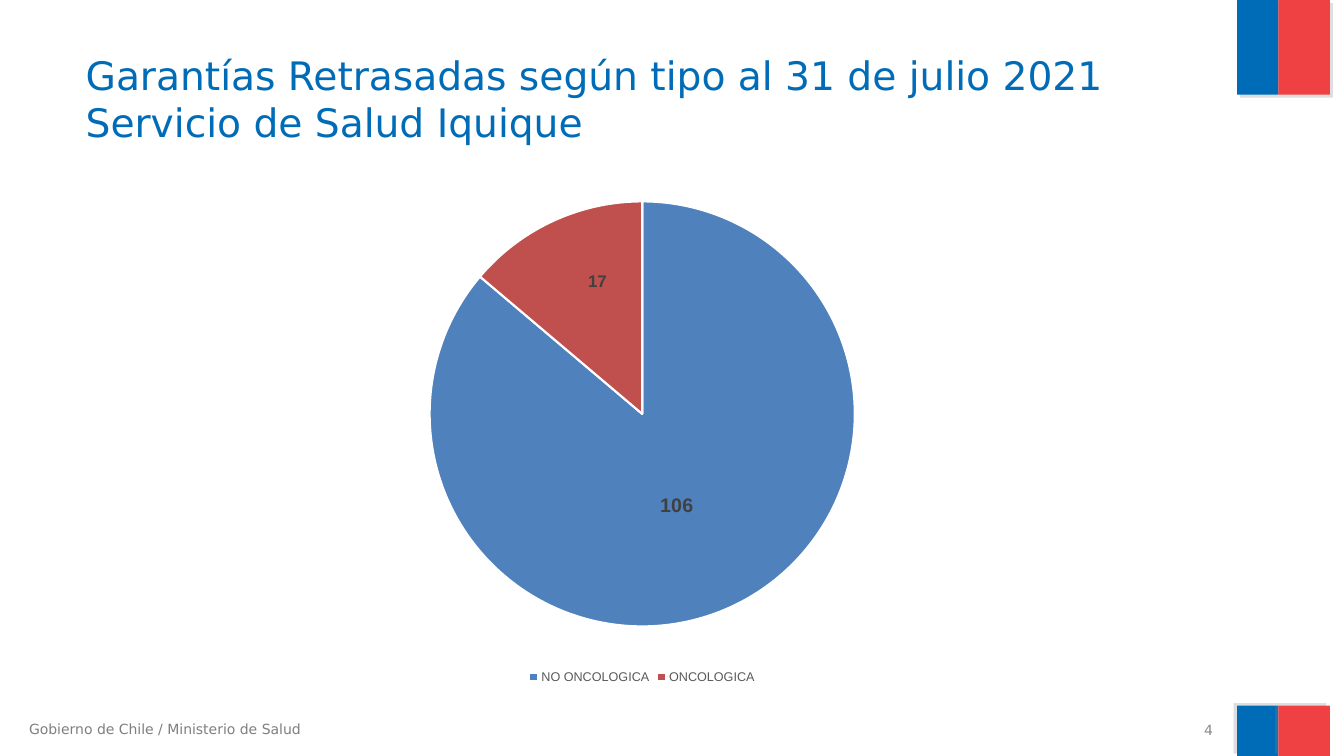
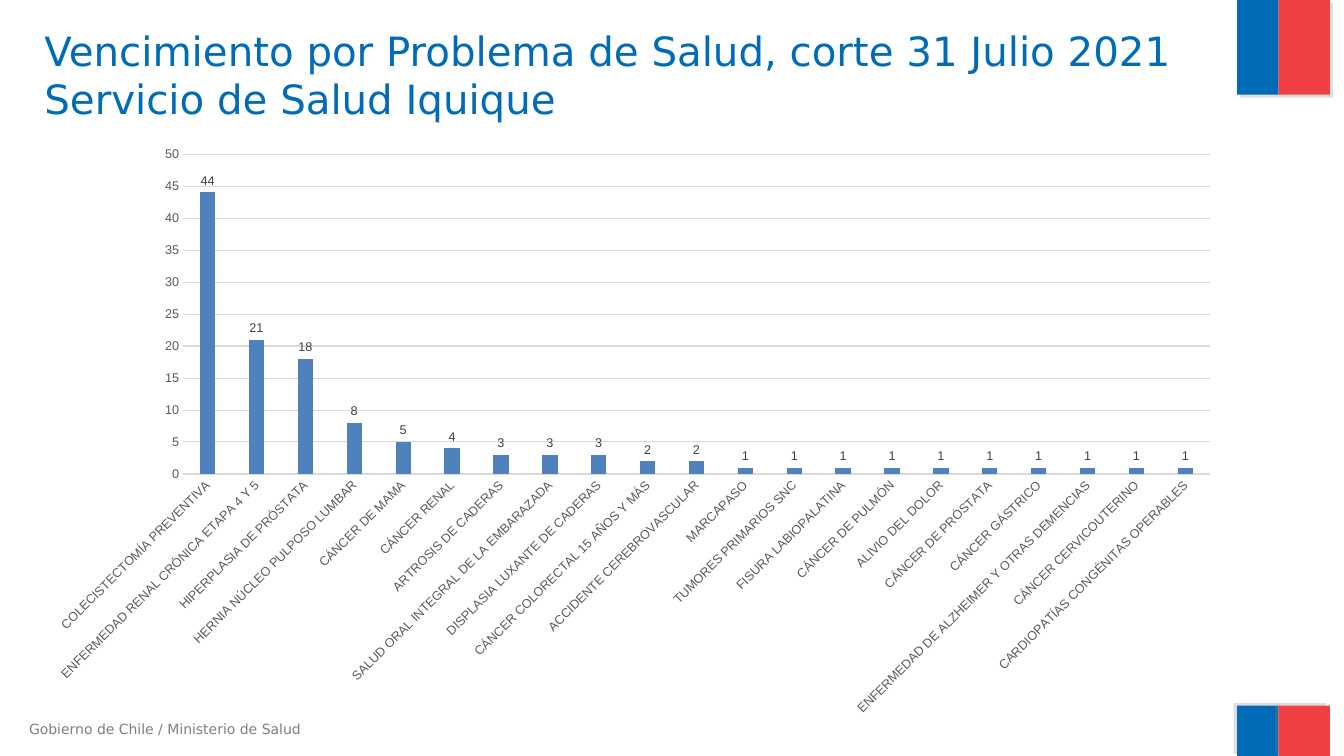
from dataclasses import dataclass

from pptx import Presentation
from pptx.chart.chart import Chart
from pptx.chart.data import CategoryChartData
from pptx.dml.color import RGBColor
from pptx.enum.chart import XL_CHART_TYPE, XL_LABEL_POSITION, XL_LEGEND_POSITION, XL_TICK_MARK
from pptx.enum.shapes import MSO_SHAPE
from pptx.enum.text import MSO_ANCHOR, MSO_AUTO_SIZE, PP_ALIGN
from pptx.oxml import parse_xml
from pptx.oxml.ns import nsdecls
from pptx.slide import Slide, SlideLayout
from pptx.text.text import Font
from pptx.util import Inches, Pt


@dataclass(frozen=True)
class Theme:
    blue: str = "006CB7"
    red: str = "EF4144"
    shadow: str = "808080"
    footer: str = "7F7F7F"
    page_number: str = "898989"
    chart_blue: str = "4F81BD"
    chart_red: str = "C0504D"
    axis_text: str = "595959"
    label_text: str = "404040"
    grid: str = "D9D9D9"
    white: str = "FFFFFF"
    text_font: str = "DejaVu Sans"
    chart_font: str = "Arial"
    small_size: float = 10
    chart_size: float = 9
    title_leading: float = 34


@dataclass(frozen=True)
class Box:
    left: float
    top: float
    width: float
    height: float

    def lengths(self) -> tuple[Inches, ...]:
        return tuple(Inches(v) for v in (self.left, self.top, self.width, self.height))


@dataclass(frozen=True)
class Band:
    box: Box
    color: str
    shadow_angle: int


@dataclass(frozen=True)
class Slice:
    name: str
    value: int
    color: str
    label_size: float
    label_shift: tuple[float, float]


THEME = Theme()

BANDS = [
    Band(Box(12.27, -0.01, 0.41, 0.95), THEME.blue, 45),
    Band(Box(12.68, 0, 0.51, 0.94), THEME.red, 45),
    Band(Box(12.27, 7, 0.41, 0.5), THEME.blue, 215),
    Band(Box(12.68, 7, 0.51, 0.5), THEME.red, 215),
]

SLICES = [
    Slice("NO ONCOLOGICA", 106, THEME.chart_blue, 14, (-0.01, -0.01)),
    Slice("ONCOLOGICA", 17, THEME.chart_red, 12, (0, -0.07)),
]

HEALTH_PROBLEMS = {
    "COLECISTECTOMÍA PREVENTIVA": 44,
    "ENFERMEDAD RENAL CRÓNICA ETAPA 4 Y 5": 21,
    "HIPERPLASIA DE PRÓSTATA": 18,
    "HERNIA NÚCLEO PULPOSO LUMBAR": 8,
    "CÁNCER DE MAMA": 5,
    "CÁNCER RENAL": 4,
    "ARTROSIS DE CADERAS": 3,
    "SALUD ORAL INTEGRAL DE LA EMBARAZADA": 3,
    "DISPLASIA LUXANTE DE CADERAS": 3,
    "CÁNCER COLORECTAL 15 AÑOS Y MÁS": 2,
    "ACCIDENTE CEREBROVASCULAR": 2,
    "MARCAPASO": 1,
    "TUMORES PRIMARIOS SNC": 1,
    "FISURA LABIOPALATINA": 1,
    "CÁNCER DE PULMÓN": 1,
    "ALIVIO DEL DOLOR": 1,
    "CÁNCER DE PRÓSTATA": 1,
    "CÁNCER GÁSTRICO": 1,
    "ENFERMEDAD DE ALZHEIMER Y OTRAS DEMENCIAS": 1,
    "CÁNCER CERVICOUTERINO": 1,
    "CARDIOPATÍAS CONGÉNITAS OPERABLES": 1,
}


# Text
def rgb(color: str) -> RGBColor:
    return RGBColor.from_string(color)


def style_font(font: Font, name: str, size: float, color: str, bold: bool = False) -> None:
    font.name, font.size, font.bold = name, Pt(size), bold
    font.color.rgb = rgb(color)


def style_chart_font(font: Font, color: str) -> None:
    style_font(font, THEME.chart_font, THEME.chart_size, color)


def add_small_text(page: Slide, box: Box, text: str, color: str,
                   align: PP_ALIGN = PP_ALIGN.LEFT, anchor: MSO_ANCHOR = MSO_ANCHOR.TOP):
    shape = page.shapes.add_textbox(*box.lengths())
    frame = shape.text_frame
    frame.word_wrap = True
    frame.vertical_anchor = anchor
    frame.text = text
    para = frame.paragraphs[0]
    para.alignment = align
    style_font(para.runs[0].font, THEME.text_font, THEME.small_size, color)
    return shape


def set_title(page: Slide, box: Box, text: str, size: float) -> None:
    title = page.shapes.title
    title.left, title.top, title.width, title.height = box.lengths()
    frame = title.text_frame
    frame.text = text
    frame.word_wrap = True
    frame.auto_size = MSO_AUTO_SIZE.NONE
    frame.vertical_anchor = MSO_ANCHOR.TOP
    frame.margin_left = frame.margin_right = Inches(0.1)
    frame.margin_top = frame.margin_bottom = Inches(0.1)
    para = frame.paragraphs[0]
    para.alignment = PP_ALIGN.LEFT
    para.line_spacing = Pt(THEME.title_leading)
    for span in para.runs:
        style_font(span.font, THEME.text_font, size, THEME.blue)


# Shared bands and footer
def add_band(page: Slide, band: Band):
    shape = page.shapes.add_shape(MSO_SHAPE.RECTANGLE, *band.box.lengths())
    shape.fill.solid()
    shape.fill.fore_color.rgb = rgb(band.color)
    shape.line.fill.background()
    shape.shadow.inherit = False
    effects = shape.element.spPr.xpath("a:effectLst")[0]
    effects.append(parse_xml(
        f'<a:outerShdw {nsdecls("a")} blurRad="0" dist="{Pt(3)}" '
        f'dir="{band.shadow_angle * 60000}" rotWithShape="0">'
        f'<a:srgbClr val="{THEME.shadow}"><a:alpha val="25000"/></a:srgbClr></a:outerShdw>'))
    return shape


def furnish_layout(page: Slide, layout: SlideLayout) -> None:
    """Move the shared shapes to the layout, so that every page shows them."""
    shared = [add_band(page, band) for band in BANDS]
    shared.append(add_small_text(page, Box(0.19, 7.1, 4.03, 0.27),
                                 "Gobierno de Chile / Ministerio de Salud", THEME.footer))
    for number, shape in enumerate(shared, start=20):
        shape.element.xpath("p:nvSpPr/p:cNvPr")[0].set("id", str(number))
        layout.shapes.element.append(shape.element)


# Charts
def manual_layout(box: Box | None = None, shift: tuple[float, float] = (0, 0)):
    """Give a plot area its place, or a label its shift, in fractions of the chart."""
    if box is None:
        fields = [("x", shift[0]), ("y", shift[1])]
    else:
        fields = [("layoutTarget", "inner"), ("xMode", "edge"), ("yMode", "edge"),
                  ("x", box.left), ("y", box.top), ("w", box.width), ("h", box.height)]
    inner = "".join(f'<c:{name} val="{value}"/>' for name, value in fields)
    return parse_xml(f'<c:layout {nsdecls("c")}><c:manualLayout>{inner}</c:manualLayout></c:layout>')


def add_chart(page: Slide, kind: XL_CHART_TYPE, box: Box, plot_box: Box,
              values: dict[str, int]) -> Chart:
    data = CategoryChartData()
    data.categories = list(values)
    data.add_series("Garantías", list(values.values()))
    chart = page.shapes.add_chart(kind, *box.lengths(), data).chart
    chart.has_title = False
    chart.has_legend = False
    chart.font.name, chart.font.size = THEME.chart_font, Pt(THEME.small_size)
    area = chart.element.xpath("c:chart/c:plotArea")[0]
    for old in area.xpath("c:layout"):
        area.remove(old)
    area.insert(0, manual_layout(plot_box))
    plot = chart.plots[0]
    plot.has_data_labels = True
    plot.data_labels.show_value = True
    style_chart_font(plot.data_labels.font, THEME.label_text)
    return chart


def add_pie(page: Slide) -> None:
    chart = add_chart(page, XL_CHART_TYPE.PIE, Box(1.35, 1.74, 10.04, 5.09),
                      Box(0.29, 0.05, 0.42, 0.83), {part.name: part.value for part in SLICES})
    chart.plots[0].vary_by_categories = True
    chart.has_legend = True
    chart.legend.position = XL_LEGEND_POSITION.BOTTOM
    chart.legend.include_in_layout = False
    style_chart_font(chart.legend.font, THEME.axis_text)
    for index, part in enumerate(SLICES):
        point = chart.plots[0].series[0].points[index]
        point.format.fill.solid()
        point.format.fill.fore_color.rgb = rgb(part.color)
        point.format.line.color.rgb = rgb(THEME.white)
        point.format.line.width = Pt(1.5)
        label = point.data_label
        style_font(label.font, THEME.chart_font, part.label_size, THEME.label_text, bold=True)
        label.position = XL_LABEL_POSITION.CENTER
        chart.element.xpath(f".//c:dLbl[c:idx/@val='{index}']")[0].insert(
            1, manual_layout(shift=part.label_shift))


def add_columns(page: Slide) -> None:
    chart = add_chart(page, XL_CHART_TYPE.COLUMN_CLUSTERED, Box(0.34, 1.34, 11.91, 5.89),
                      Box(0.124, 0.032, 0.855, 0.539), HEALTH_PROBLEMS)
    plot = chart.plots[0]
    plot.vary_by_categories = False
    plot.gap_width, plot.overlap = 219, -27
    plot.data_labels.position = XL_LABEL_POSITION.OUTSIDE_END
    series = plot.series[0]
    series.invert_if_negative = False
    series.format.fill.solid()
    series.format.fill.fore_color.rgb = rgb(THEME.chart_blue)

    category_axis, value_axis = chart.category_axis, chart.value_axis
    for axis in (category_axis, value_axis):
        axis.major_tick_mark = axis.minor_tick_mark = XL_TICK_MARK.NONE
        style_chart_font(axis.tick_labels.font, THEME.axis_text)
    value_axis.minimum_scale, value_axis.maximum_scale, value_axis.major_unit = 0, 50, 5
    value_axis.has_major_gridlines = True
    value_axis.format.line.fill.background()
    for line in (category_axis.format.line, value_axis.major_gridlines.format.line):
        line.color.rgb = rgb(THEME.grid)
        line.width = Pt(0.75)
    chart.element.xpath(".//c:catAx/c:txPr/a:bodyPr")[0].set("rot", str(-45 * 60000))


def main() -> None:
    deck = Presentation()
    deck.slide_width, deck.slide_height = Inches(13.33), Inches(7.5)
    layout = deck.slide_layouts[5]

    # Delayed guarantees by type
    page = deck.slides.add_slide(layout)
    furnish_layout(page, layout)
    set_title(page, Box(0.75, 0.4, 11.24, 1.25),
              "Garantías Retrasadas según tipo al 31 de julio 2021\vServicio de Salud Iquique", 28)
    add_small_text(page, Box(9.02, 7.14, 3.11, 0.21), "4", THEME.page_number,
                   PP_ALIGN.RIGHT, MSO_ANCHOR.MIDDLE)
    add_pie(page)

    # Expired guarantees by health problem
    page = deck.slides.add_slide(layout)
    set_title(page, Box(0.34, 0.17, 11.79, 1.25),
              "Vencimiento por Problema de Salud, corte 31 Julio 2021\vServicio de Salud Iquique", 28.8)
    add_columns(page)

    deck.save("out.pptx")


if __name__ == "__main__":
    main()
